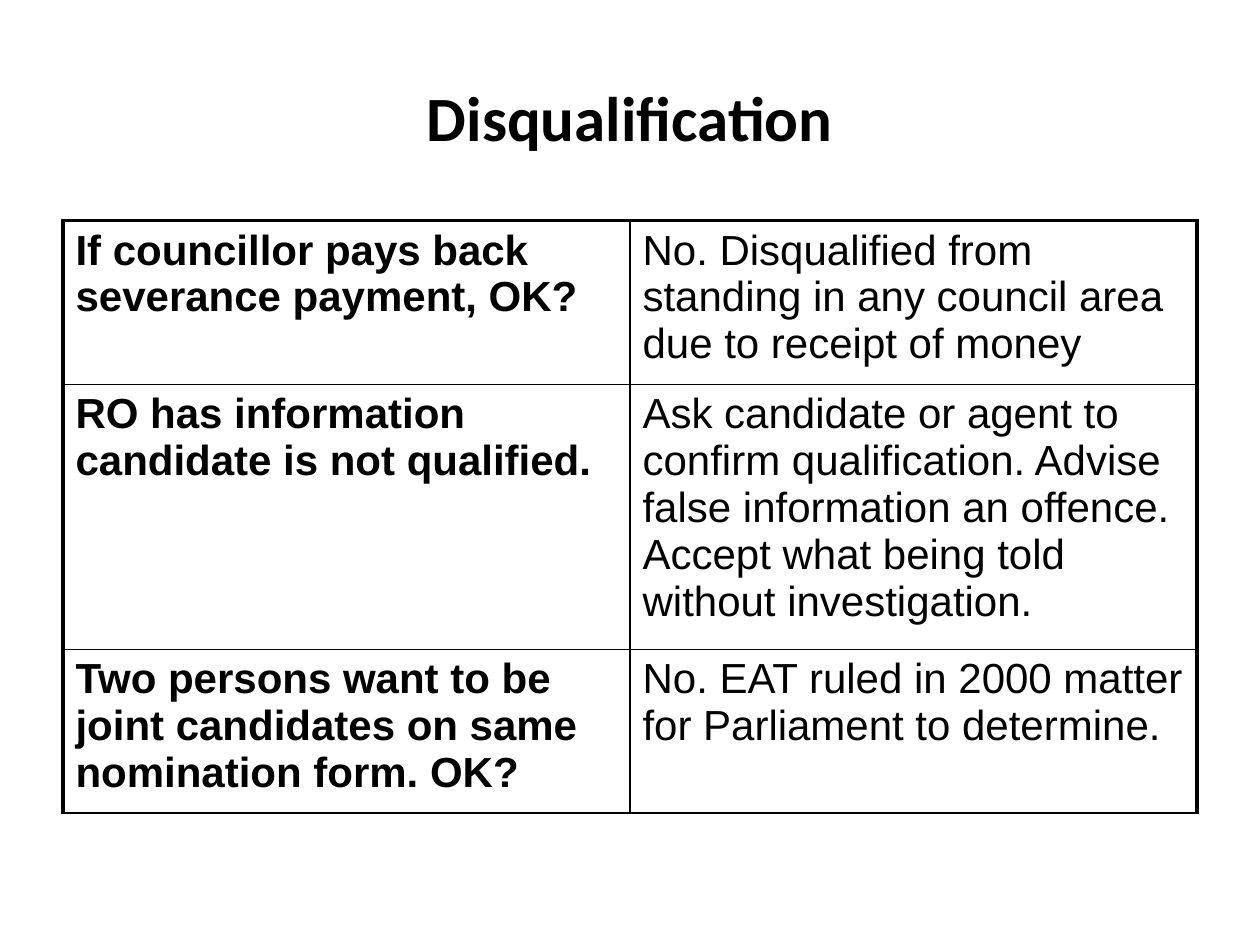
from dataclasses import dataclass

from lxml.etree import SubElement
from pptx import Presentation
from pptx.dml.color import RGBColor
from pptx.enum.text import MSO_ANCHOR, PP_ALIGN
from pptx.oxml.ns import qn
from pptx.slide import Slide
from pptx.table import _Cell
from pptx.text.text import TextFrame
from pptx.util import Cm, Pt

COLOURS = {"text": "000000", "border": "000000"}
OUTER_LINE = Pt(2.25)
INNER_LINE = Pt(1)
MARGIN = Cm(1.27)
CONTENT_WIDTH = Cm(22.86)


@dataclass
class Case:
    question: str
    answer: str
    height: float


CASES = [
    Case("If councillor pays back severance payment, OK?",
         "No. Disqualified from standing in any council area due to receipt of money",
         3.3),
    Case("RO has information candidate is not qualified.",
         "Ask candidate or agent to confirm qualification. Advise false information "
         "an offence. Accept what being told without investigation.",
         5.33),
    Case("Two persons want to be joint candidates on same nomination form. OK?",
         "No. EAT ruled in 2000 matter for Parliament to determine.",
         3.3),
]


def write_text(frame: TextFrame, text: str, font_name: str, size: int, bold: bool) -> None:
    frame.text = text
    frame.word_wrap = True
    font = frame.paragraphs[0].runs[0].font
    font.name = font_name
    font.size = Pt(size)
    font.bold = bold
    font.color.rgb = RGBColor.from_string(COLOURS["text"])


def set_borders(cell: _Cell, widths: dict[str, int]) -> None:
    """Draw solid borders; widths maps the sides L, R, T, B, in that order."""
    properties = cell._tc.get_or_add_tcPr()
    for side, width in widths.items():
        line = SubElement(properties, qn(f"a:ln{side}"), w=str(int(width)))
        fill = SubElement(line, qn("a:solidFill"))
        SubElement(fill, qn("a:srgbClr"), val=COLOURS["border"])


def add_title(page: Slide, text: str) -> None:
    box = page.shapes.add_textbox(MARGIN, Cm(0.76), CONTENT_WIDTH, Cm(3.18))
    write_text(box.text_frame, text, "Calibri", 36, True)
    box.text_frame.vertical_anchor = MSO_ANCHOR.MIDDLE
    box.text_frame.paragraphs[0].alignment = PP_ALIGN.CENTER


def add_case_table(page: Slide, cases: list[Case]) -> None:
    height = Cm(sum(case.height for case in cases))
    table = page.shapes.add_table(
        len(cases), 2, MARGIN, Cm(4.45), CONTENT_WIDTH, height).table
    table.first_row = False
    table.horz_banding = False
    for row, case in enumerate(cases):
        table.rows[row].height = Cm(case.height)
        for column, text in enumerate((case.question, case.answer)):
            cell = table.cell(row, column)
            write_text(cell.text_frame, text, "Arial", 24, column == 0)
            set_borders(cell, {
                "L": OUTER_LINE if column == 0 else INNER_LINE,
                "R": OUTER_LINE if column == 1 else INNER_LINE,
                "T": OUTER_LINE if row == 0 else INNER_LINE,
                "B": INNER_LINE,
            })
            cell.fill.background()


def main() -> None:
    deck = Presentation()
    deck.slide_width = Cm(25.4)
    deck.slide_height = Cm(19.05)
    page = deck.slides.add_slide(deck.slide_layouts[6])
    add_title(page, "Disqualification")
    add_case_table(page, CASES)
    deck.save("out.pptx")


if __name__ == "__main__":
    main()
